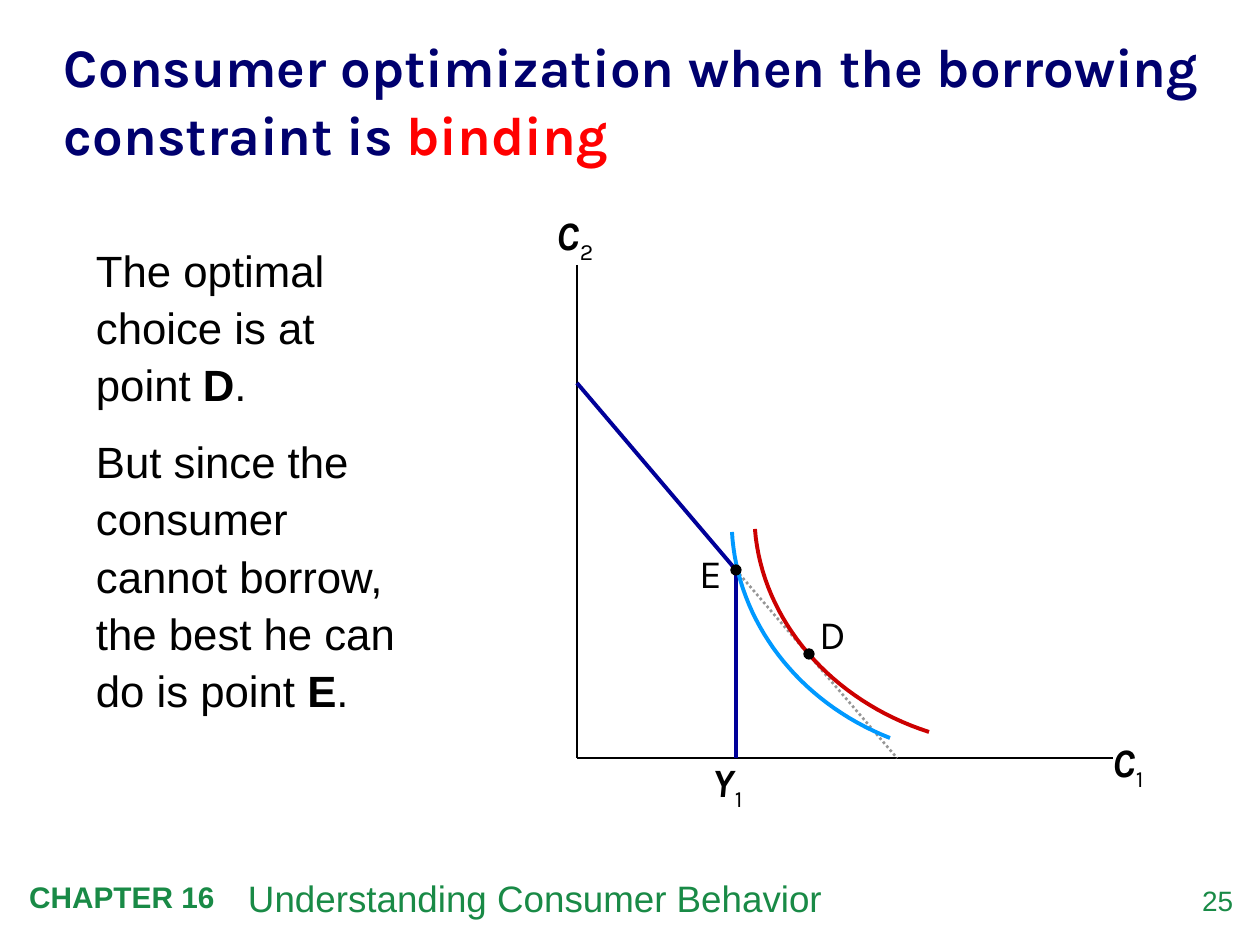
from lxml.etree import SubElement
from pptx import Presentation
from pptx.dml.color import RGBColor
from pptx.enum.dml import MSO_LINE_DASH_STYLE as Dash
from pptx.enum.shapes import MSO_CONNECTOR as Connector, MSO_SHAPE as Shape
from pptx.enum.text import MSO_ANCHOR as Anchor, PP_ALIGN as Align
from pptx.oxml.ns import qn
from pptx.util import Pt

SCALE = 914400 / 126
NAVY, BUDGET, GREEN, BLACK = "00006E", "000099", "198A46", "000000"


def px(length):
    """Turn a length in px into EMU."""
    return round(length * SCALE)


def color(value):
    """Turn a hex string into a colour."""
    return RGBColor.from_string(value)


def add_span(para, text, size=23, font="Karla", fill=BLACK, bold=False, italic=False, base=0):
    """Add a formatted run of text to a paragraph."""
    span = para.add_run()
    span.text = text
    span.font.size, span.font.name = Pt(size), font
    span.font.bold, span.font.italic = bold, italic
    span.font.color.rgb = color(fill)
    if base:
        span.font._element.set("baseline", str(base * 1000))


def set_frame(shape, box, inset=(0, 0, 0, 0), anchor=Anchor.TOP):
    """Place a text shape, set its margins and return its frame."""
    shape.left, shape.top, shape.width, shape.height = map(px, box)
    frame = shape.text_frame
    frame.word_wrap, frame.vertical_anchor = True, anchor
    frame.margin_left, frame.margin_top, frame.margin_right, frame.margin_bottom = map(px, inset)
    return frame


def add_frame(page, box, **kwargs):
    """Add a text box and return its frame."""
    return set_frame(page.shapes.add_textbox(0, 0, 0, 0), box, **kwargs)


def add_line(page, start, end, stroke=BLACK, width=1, dash=None):
    """Draw a straight line without a shadow."""
    line = page.shapes.add_connector(Connector.STRAIGHT, *map(px, start + end))
    line.line.color.rgb, line.line.width = color(stroke), Pt(width)
    if dash:
        line.line.dash_style = dash
    SubElement(line._element.spPr, qn("a:effectLst"))


def add_curve(page, points, stroke, steps=32):
    """Draw an open cubic curve from its four control points."""
    weights = [
        ((1 - t) ** 3, 3 * t * (1 - t) ** 2, 3 * t * t * (1 - t), t ** 3)
        for t in (step / steps for step in range(steps + 1))
    ]
    track = [
        tuple(px(sum(w * p[axis] for w, p in zip(row, points))) for axis in (0, 1))
        for row in weights
    ]
    builder = page.shapes.build_freeform(*track[0])
    builder.add_line_segments(track[1:], close=False)
    curve = builder.convert_to_shape()
    curve.shadow.inherit = False
    curve.fill.background()
    curve.line.color.rgb, curve.line.width = color(stroke), Pt(2.25)


def add_dot(page, center, radius=5):
    """Draw a black point."""
    corner = [px(value - radius) for value in center]
    dot = page.shapes.add_shape(Shape.OVAL, *corner, px(2 * radius), px(2 * radius))
    dot.shadow.inherit = False
    dot.fill.solid()
    dot.fill.fore_color.rgb = dot.line.color.rgb = color(BLACK)
    dot.line.width = Pt(0.75)


def add_variable(page, corner, letter, index):
    """Write a variable with its subscript."""
    para = add_frame(page, corner + (53, 54)).paragraphs[0]
    add_span(para, letter, bold=True, italic=True)
    add_span(para, index, base=-25)


def add_title(page, box):
    """Fill the title placeholder."""
    para = set_frame(page.shapes.title, box, anchor=Anchor.MIDDLE).paragraphs[0]
    para.alignment, para.line_spacing = Align.LEFT, 1.05
    add_span(para, "Consumer optimization when the borrowing constraint is ",
             size=31, fill=NAVY, bold=True)
    add_span(para, "binding", size=31, fill="FF0000", bold=True)


def add_body(page, box):
    """Write the explanation, with each point name in bold."""
    frame = add_frame(page, box, inset=(13, 6, 13, 6))
    sentences = [
        ("The optimal choice is at point ", "D"),
        ("But since the consumer cannot borrow, the best he can do is point ", "E"),
    ]
    for number, (sentence, point) in enumerate(sentences):
        para = frame.add_paragraph() if number else frame.paragraphs[0]
        para.line_spacing = 1.09
        para.space_before = Pt(11.25 if number else 0)
        for text, bold in ((sentence, False), (point, True), (".", False)):
            add_span(para, text, size=25, font="Arial", bold=bold)


def add_diagram(page, box):
    """Draw the axes, budget line, indifference curves and labels."""
    left, top, width, height = box

    def at(x, y):
        """Move a point into the box."""
        return left + x, top + y

    origin, kink, foot = at(0, height), at(159, 305), at(159, height)
    add_line(page, at(0, 0), origin)
    add_line(page, origin, at(width, height))
    add_variable(page, at(width, 472), "C", "1")
    add_variable(page, at(-20, -55), "C", "2")
    add_variable(page, at(136, 492), "Y", "1")
    add_line(page, at(0, 118), kink, BUDGET, 2.25)
    add_line(page, kink, at(320, height), "969696", 1.5, Dash.ROUND_DOT)
    add_line(page, kink, foot, BUDGET, 2.25)
    add_curve(page, [at(352, 467), at(255, 436), at(185, 356), at(178, 264)], "CC0000")
    add_curve(page, [at(313, 473), at(221, 437), at(160, 356), at(155, 267)], "0099FF")
    for letter, dot, label in (("D", (232, 389), (242, 344)), ("E", (159, 305), (123, 283))):
        add_dot(page, at(*dot))
        add_span(add_frame(page, at(*label) + (30, 48)).paragraphs[0], letter)


def add_footer(page, box):
    """Write the chapter, its name and the page number."""
    left, top, width, height = box
    parts = [
        (0, 3, 210, "CHAPTER 16", 17, True, Align.LEFT),
        (219, 0, 800, "Understanding Consumer Behavior", 21, False, Align.LEFT),
        (width - 69, 8, 69, "25", 16, False, Align.RIGHT),
    ]
    for x, y, part_width, text, size, bold, align in parts:
        para = add_frame(page, (left + x, top + y, part_width, height)).paragraphs[0]
        para.alignment = align
        add_span(para, text, size=size, font="Arial", fill=GREEN, bold=bold)


def main():
    """Build the slide and save it."""
    deck = Presentation()
    deck.slide_width, deck.slide_height = px(1260), px(945)
    page = deck.slides.add_slide(deck.slide_layouts[5])
    add_footer(page, (29, 876, 1204, 45))
    add_title(page, (64, 33, 1137, 130))
    add_body(page, (83, 233, 347, 496))
    add_diagram(page, (577, 265, 536, 493))
    deck.save("out.pptx")


if __name__ == "__main__":
    main()
